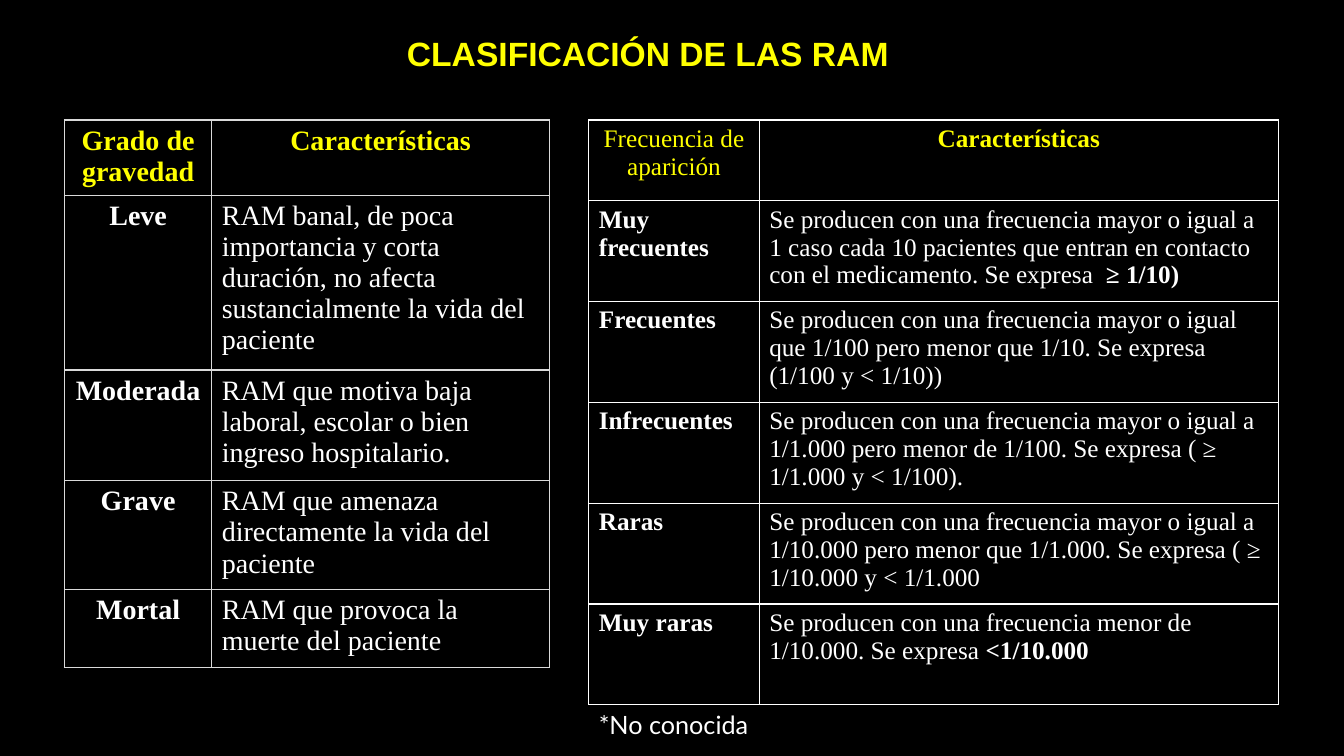
from lxml import etree
from pptx import Presentation
from pptx.dml.color import RGBColor
from pptx.enum.text import PP_ALIGN
from pptx.oxml.ns import qn
from pptx.util import Inches, Pt

LEFT, CENTER = PP_ALIGN.LEFT, PP_ALIGN.CENTER
BLACK, WHITE, YELLOW, GREY = "000000", "FFFFFF", "FFFF00", "DADADA"
SERIF = "Times New Roman"

SEVERITY = [
    ("Grado de gravedad", "Características"),
    ("Leve", "RAM banal, de poca importancia y corta duración, no afecta "
             "sustancialmente la vida del paciente"),
    ("Moderada", "RAM que motiva baja laboral, escolar o bien ingreso hospitalario."),
    ("Grave", "RAM que amenaza directamente la vida del paciente"),
    ("Mortal", "RAM que provoca la muerte del paciente"),
]
FREQUENCY = [
    ("Frecuencia de aparición", "Características"),
    ("Muy frecuentes", "Se producen con una frecuencia mayor o igual a 1 caso cada 10 "
                       "pacientes que entran en contacto con el medicamento. Se expresa ",
     " ≥ 1/10)"),
    ("Frecuentes", "Se producen con una frecuencia mayor o igual que 1/100 pero menor "
                   "que 1/10. Se expresa (1/100 y < 1/10))"),
    ("Infrecuentes", "Se producen con una frecuencia mayor o igual a 1/1.000 pero menor "
                     "de 1/100. Se expresa ( ≥ 1/1.000 y < 1/100)."),
    ("Raras", "Se producen con una frecuencia mayor o igual a 1/10.000 pero menor que "
              "1/1.000. Se expresa ( ≥ 1/10.000 y < 1/1.000"),
    ("Muy raras", "Se producen con una frecuencia menor de 1/10.000. Se expresa ",
     "<1/10.000"),
]


def rgb(color):
    return RGBColor.from_string(color)


def add_text(p, text, size=18, font=SERIF, color=WHITE, bold=False, align=LEFT):
    p.alignment = align
    r = p.add_run()
    r.text = text
    r.font.size = Pt(size)
    r.font.name = font
    r.font.bold = bold
    r.font.color.rgb = rgb(color)


def add_label(s, left, top, width, height, text, **fmt):
    box = s.shapes.add_textbox(Inches(left), Inches(top), Inches(width), Inches(height))
    tf = box.text_frame
    tf.word_wrap = True
    add_text(tf.paragraphs[0], text, **fmt)


def style_cell(cell, border):
    tcPr = cell._tc.get_or_add_tcPr()
    for side in ("a:lnL", "a:lnR", "a:lnT", "a:lnB"):
        ln = etree.SubElement(tcPr, qn(side), w=str(Pt(1)))
        fill = etree.SubElement(ln, qn("a:solidFill"))
        etree.SubElement(fill, qn("a:srgbClr"), val=border)
    cell.fill.solid()
    cell.fill.fore_color.rgb = rgb(BLACK)


def add_grid(s, left, top, widths, heights, rows, border, size, label_align, bold_corner):
    frame = s.shapes.add_table(len(rows), len(widths), Inches(left), Inches(top),
                               Inches(sum(widths)), Inches(sum(heights)))
    table = frame.table
    table.first_row = table.horz_banding = False
    for column, width in zip(table.columns, widths):
        column.width = Inches(width)
    for row, height in zip(table.rows, heights):
        row.height = Inches(height)
    for i, (label, detail, *ending) in enumerate(rows):
        header = i == 0
        color = YELLOW if header else WHITE
        label_cell, detail_cell = table.cell(i, 0), table.cell(i, 1)
        style_cell(label_cell, border)
        style_cell(detail_cell, border)
        add_text(label_cell.text_frame.paragraphs[0], label, size=size, color=color,
                 bold=bold_corner or not header, align=CENTER if header else label_align)
        p = detail_cell.text_frame.paragraphs[0]
        add_text(p, detail, size=size, color=color, bold=header,
                 align=CENTER if header else LEFT)
        for text in ending:
            add_text(p, text, size=size, color=color, bold=True)


def main():
    prs = Presentation()
    prs.slide_width, prs.slide_height = Inches(13.33), Inches(7.5)
    s = prs.slides.add_slide(prs.slide_layouts[6])
    s.background.fill.solid()
    s.background.fill.fore_color.rgb = rgb(BLACK)

    add_grid(s, 0.64, 1.19, [1.46, 3.35], [0.75, 1.73, 1.1, 1.08, 0.77], SEVERITY,
             border=GREY, size=20, label_align=CENTER, bold_corner=True)
    add_label(s, 3.04, 0.28, 6.77, 0.5, "CLASIFICACIÓN DE LAS RAM",
              size=24, font="Arial", color=YELLOW, bold=True, align=CENTER)
    add_grid(s, 5.84, 1.19, [1.69, 5.15], [0.8] + [1] * 5, FREQUENCY,
             border=WHITE, size=18, label_align=LEFT, bold_corner=False)
    add_label(s, 5.84, 6.99, 3.29, 0.4, "*No conocida", font="Lato")
    prs.save("out.pptx")


if __name__ == "__main__":
    main()
